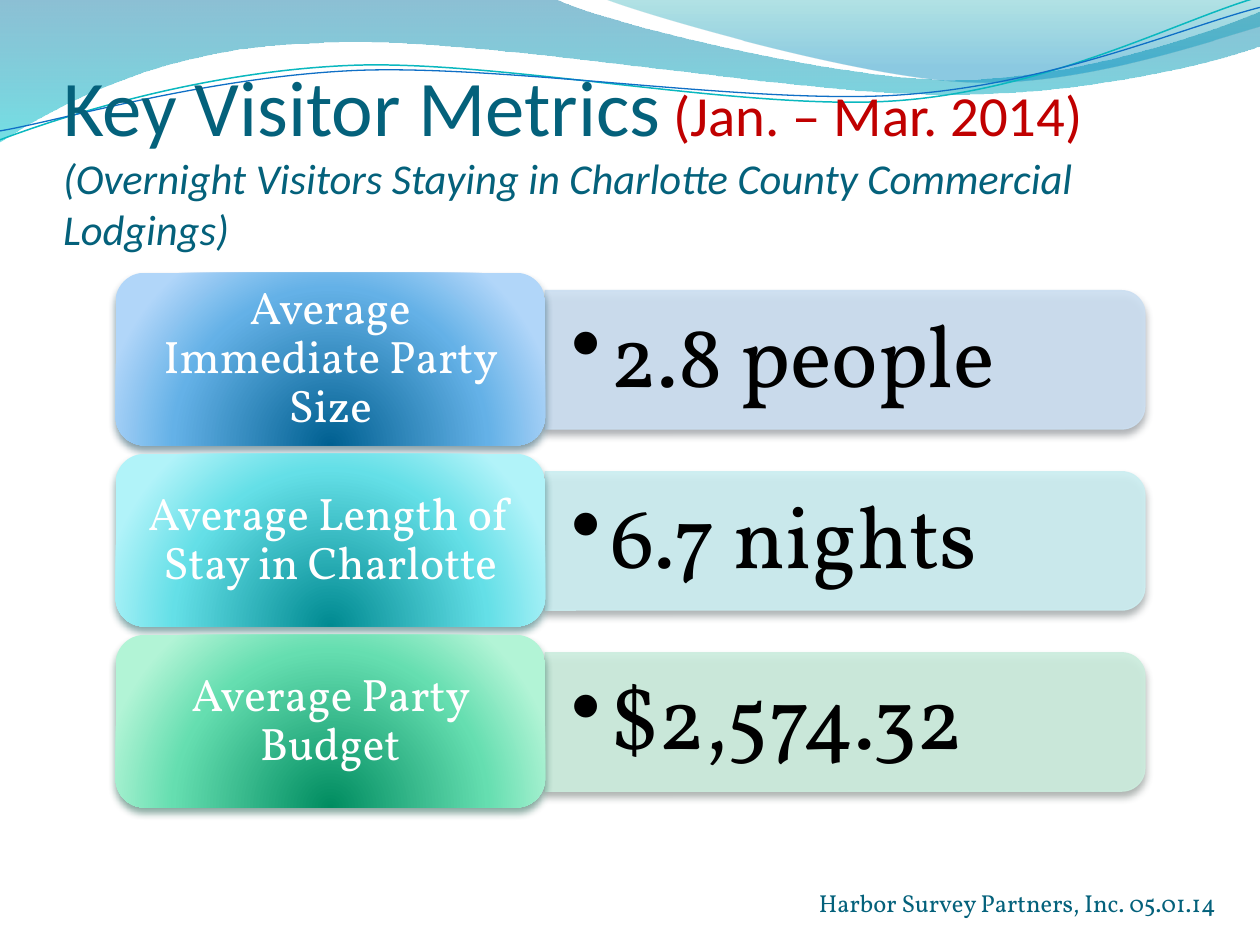
from lxml.etree import SubElement
from pptx import Presentation
from pptx.dml.color import RGBColor
from pptx.enum.shapes import MSO_SHAPE as Preset
from pptx.enum.text import MSO_ANCHOR as Anchor, MSO_AUTO_SIZE as AutoSize, PP_ALIGN as Align
from pptx.oxml.ns import qn
from pptx.util import Cm, Pt

COLORS = {
    "teal": "04617B", "red": "C00000", "white": "FFFFFF", "black": "000000",
    "wave blue": "0074A1", "wave cyan": "00C6CF",
    "crest green": "00A1A9", "crest blue": "008BBF",
    "thread cyan": "0AB8BF", "thread blue": "0F6FC6",
}
METRICS = [
    {"label": "Average Immediate Party Size", "value": "2.8 people",
     "panel": "CCDFF1", "panel shadow": "474E55", "label shadow": "00374C",
     "glow": ("006091", "64B1E7", "B1D6F9")},
    {"label": "Average Length of Stay in Charlotte", "value": "6.7 nights",
     "panel": "CCEEF1", "panel shadow": "475455", "label shadow": "024B4E",
     "glow": ("008A91", "64DFE7", "B1F3F9")},
    {"label": "Average Party Budget", "value": "$2,574.32",
     "panel": "CCEDDE", "panel shadow": "47544E", "label shadow": "044A37",
     "glow": ("008C60", "65DEB0", "B2F4D6")},
]
ROW_PITCH = 3.65

WAVE = [(0, 0), (11.18, -0.03),
        (12.09, 0.43, 16.87, 1.6, 19.25, 1.6),
        (21.67, 1.6, 24.33, 0.66, 25.4, 0.23), (25.43, 0.91),
        (24.97, 1.12, 22.1, 1.93, 18.95, 1.9),
        (15.8, 1.9, 9.7, 0.71, 6.53, 0.86),
        (3.28, 0.91, 1.17, 2.11, -0.03, 2.87), (0, 0)]
CREST = [(12.17, -0.03),
         (12.93, 0.28, 17.32, 1.57, 19.53, 1.65),
         (21.74, 1.75, 24.41, 0.81, 25.4, 0.53), (25.4, 0), (12.17, -0.03)]
CYAN_THREAD = [(0, 2.82),
               (1.22, 2.36, 4.01, 1.45, 7.04, 1.32),
               (10.03, 1.19, 15.06, 2.26, 18.11, 2.03),
               (21.16, 1.8, 23.83, 0.38, 25.35, -0.05)]
BLUE_THREAD = [(0, 2.64),
               (1.19, 2.44, 4.17, 1.55, 7.19, 1.42),
               (10.24, 1.3, 15.27, 2.13, 18.21, 1.91),
               (21.23, 1.7, 23.9, 0.53, 25.4, 0.15)]


def rgb(color):
    return RGBColor.from_string(color)


def add_color(parent, color, opacity=100):
    swatch = SubElement(parent, qn("a:srgbClr"), val=color)
    SubElement(swatch, qn("a:alpha"), val=str(opacity * 1000))


def fill_gradient(shape, stops, radial=False):
    shape.fill.background()
    properties = shape._element.spPr
    blank = properties.find(qn("a:noFill"))
    gradient = SubElement(properties, qn("a:gradFill"), rotWithShape="1")
    properties.replace(blank, gradient)
    stop_list = SubElement(gradient, qn("a:gsLst"))
    for position, color, opacity in stops:
        stop = SubElement(stop_list, qn("a:gs"), pos=str(position * 1000))
        add_color(stop, color, opacity)
    if radial:
        circle = SubElement(gradient, qn("a:path"), {"path": "circle"})
        SubElement(circle, qn("a:fillToRect"), l="50000", t="130000", r="50000", b="-30000")
    else:
        SubElement(gradient, qn("a:lin"), ang="5400000", scaled="1")


def drop_shadow(shape, color):
    shape.shadow.inherit = False
    effects = shape._element.spPr.find(qn("a:effectLst"))
    shadow = SubElement(effects, qn("a:outerShdw"), blurRad=str(Pt(4.5)),
                        dist=str(Pt(3)), dir="5400000", rotWithShape="0")
    add_color(shadow, color, 48)


def add_outline(slide, outline, close):
    start, *anchors = [(Cm(segment[-2]), Cm(segment[-1])) for segment in outline]
    builder = slide.shapes.build_freeform(*start)
    builder.add_line_segments(anchors, close=close)
    shape = builder.convert_to_shape()
    shape.shadow.inherit = False
    steps = list(shape._element.spPr.iter(qn("a:lnTo")))
    for step, segment in zip(steps, outline[1:]):
        if len(segment) == 6:
            end = step[0]
            for x, y in (segment[:2], segment[2:4]):
                SubElement(step, qn("a:pt"), x=str(Cm(x) - shape.left), y=str(Cm(y) - shape.top))
            step.append(end)
            step.tag = qn("a:cubicBezTo")
    return shape


def add_wave(slide, outline, stops):
    wave = add_outline(slide, outline, True)
    fill_gradient(wave, stops)
    wave.line.fill.background()


def add_thread(slide, outline, color, width):
    thread = add_outline(slide, outline, False)
    thread.fill.background()
    thread.line.color.rgb = rgb(color)
    thread.line.width = Pt(width)


def set_frame(frame, anchor, left, top, right, bottom):
    frame.word_wrap = True
    frame.auto_size = AutoSize.NONE
    frame.vertical_anchor = anchor
    frame.margin_left, frame.margin_top = Cm(left), Cm(top)
    frame.margin_right, frame.margin_bottom = Cm(right), Cm(bottom)


def add_run(paragraph, text, size, color, font="Vollkorn", italic=False):
    run = paragraph.add_run()
    run.text = text
    run.font.size = Pt(size)
    run.font.name = font
    run.font.italic = italic
    run.font.color.rgb = rgb(color)


def add_title(slide):
    title = slide.shapes.title
    title.left, title.top, title.width, title.height = Cm(1.27), Cm(1.95), Cm(23.7), Cm(3.18)
    set_frame(title.text_frame, Anchor.BOTTOM, 0, 0.13, 0, 0)
    heading = title.text_frame.paragraphs[0]
    heading.alignment = Align.LEFT
    add_run(heading, "Key Visitor Metrics", 45, COLORS["teal"], "Calibri")
    add_run(heading, " (Jan. – Mar. 2014)", 32.4, COLORS["red"], "Calibri")
    heading.add_line_break()
    add_run(heading, "(Overnight Visitors Staying in Charlotte County Commercial Lodgings)",
            24.3, COLORS["teal"], "Calibri", True)


def add_panel(slide, metric, offset):
    panel = slide.shapes.add_shape(Preset.ROUND_2_SAME_RECTANGLE,
                                   Cm(15.64), Cm(1.21 + offset), Cm(2.79), Cm(12.09))
    panel.rotation = 90
    panel.fill.solid()
    panel.fill.fore_color.rgb = rgb(metric["panel"])
    panel.line.color.rgb = rgb(metric["panel"])
    panel.line.width = Pt(0.75)
    for swatch in panel._element.spPr.iter(qn("a:srgbClr")):
        SubElement(swatch, qn("a:alpha"), val="90000")
    drop_shadow(panel, metric["panel shadow"])


def add_value(slide, metric, offset):
    box = slide.shapes.add_textbox(Cm(10.98), Cm(5.99 + offset), Cm(11.94), Cm(2.51))
    set_frame(box.text_frame, Anchor.MIDDLE, 0.54, 0.25, 0.54, 0.25)
    value = box.text_frame.paragraphs[0]
    value.line_spacing = 0.9
    properties = value._p.get_or_add_pPr()
    properties.set("marL", str(Cm(0.79)))
    properties.set("indent", str(Cm(-0.79)))
    SubElement(properties, qn("a:buChar"), char="••")
    add_run(value, metric["value"], 50, COLORS["black"])


def add_label(slide, metric, offset):
    label = slide.shapes.add_shape(Preset.ROUNDED_RECTANGLE,
                                   Cm(2.33), Cm(5.5 + offset), Cm(8.66), Cm(3.48))
    dark, middle, light = metric["glow"]
    fill_gradient(label, [(0, dark, 100), (68, middle, 100), (100, light, 100)], True)
    label.line.fill.background()
    drop_shadow(label, metric["label shadow"])
    set_frame(label.text_frame, Anchor.MIDDLE, 0.43, 0.28, 0.43, 0.28)
    caption = label.text_frame.paragraphs[0]
    caption.alignment = Align.CENTER
    caption.line_spacing = 0.9
    add_run(caption, metric["label"], 26, COLORS["white"])


def add_credit(slide):
    box = slide.shapes.add_textbox(Cm(16.08), Cm(17.78), Cm(8.69), Cm(0.86))
    set_frame(box.text_frame, Anchor.TOP, 0.25, 0.13, 0.25, 0.13)
    credit = box.text_frame.paragraphs[0]
    credit.alignment = Align.RIGHT
    add_run(credit, "Harbor Survey Partners, Inc. 05.01.14", 14, COLORS["teal"])


def main():
    deck = Presentation()
    deck.slide_width, deck.slide_height = Cm(25.4), Cm(19.05)
    slide = deck.slides.add_slide(deck.slide_layouts[5])
    add_wave(slide, WAVE, [(0, COLORS["wave blue"], 45), (100, COLORS["wave cyan"], 55)])
    add_wave(slide, CREST, [(0, COLORS["crest green"], 30), (80, COLORS["crest blue"], 45)])
    add_thread(slide, CYAN_THREAD, COLORS["thread cyan"], 0.85)
    add_thread(slide, BLUE_THREAD, COLORS["thread blue"], 0.75)
    add_credit(slide)
    add_title(slide)
    slide.shapes._spTree.append(slide.shapes.title._element)
    for row, metric in enumerate(METRICS):
        offset = row * ROW_PITCH
        add_panel(slide, metric, offset)
        add_value(slide, metric, offset)
        add_label(slide, metric, offset)
    deck.save("out.pptx")


if __name__ == "__main__":
    main()
